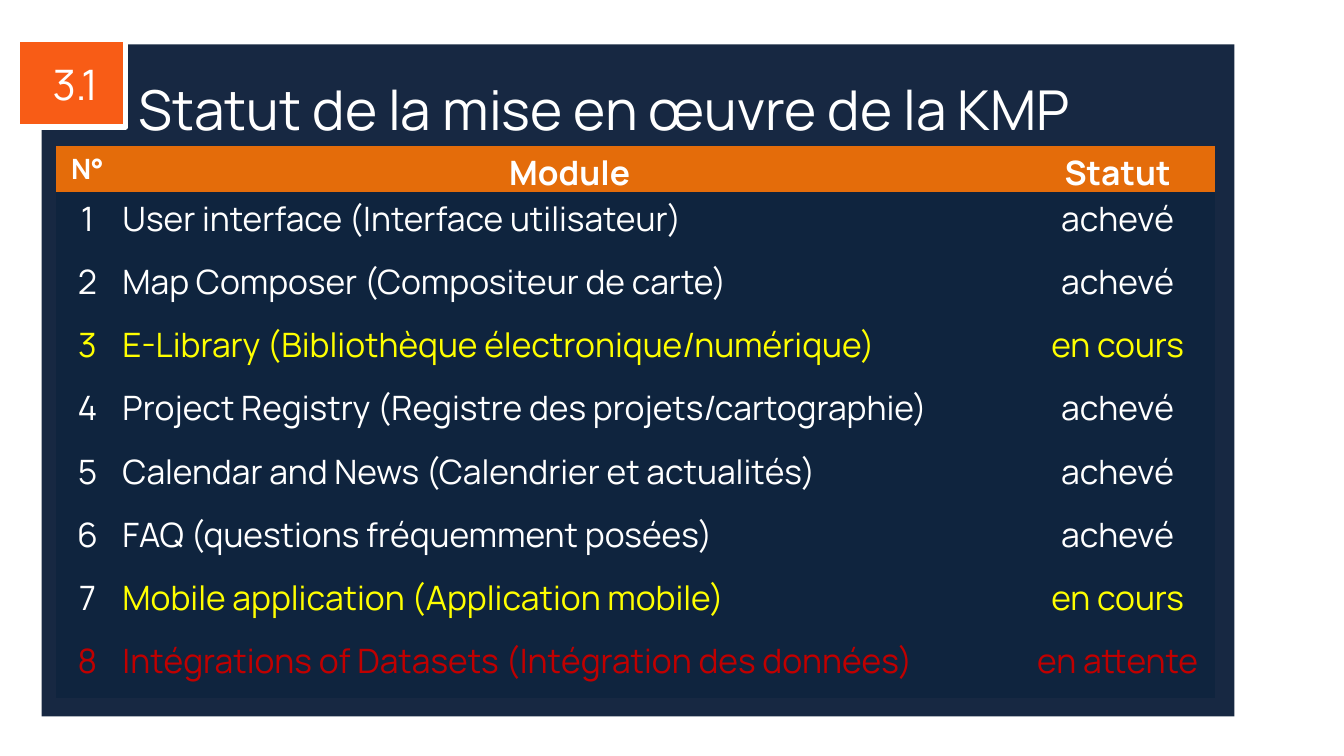
from dataclasses import dataclass

from pptx import Presentation
from pptx import util as u
from pptx.dml.color import RGBColor
from pptx.enum import shapes, text

FONT = "Manrope"
WHITE, YELLOW, RED = "FFFFFF", "FFFF00", "C00000"
NAVY, PANEL = "0F243E", "172842"
ORANGE, BADGE = "E46C0A", "F85C16"
CENTER, LEFT = text.PP_ALIGN.CENTER, text.PP_ALIGN.LEFT
COLUMN_WIDTHS = (2.39, 34.06, 7.37)
HEADER_HEIGHT, ROW_HEIGHT = 1.75, 2.39
TABLE_HEIGHT = 21.84


@dataclass(frozen=True)
class Area:
    left: float
    top: float
    width: float
    height: float

    def lengths(self) -> tuple:
        return tuple(u.Cm(n) for n in (self.left, self.top, self.width, self.height))


@dataclass(frozen=True)
class Module:
    name: str
    status: str
    color: str = WHITE
    number_color: str = WHITE


MODULES = (
    Module("User interface (Interface utilisateur)", "achevé"),
    Module("Map Composer (Compositeur de carte)", "achevé"),
    Module("E-Library (Bibliothèque électronique/numérique)", "en cours", YELLOW, YELLOW),
    Module("Project Registry (Registre des projets/cartographie)", "achevé"),
    Module("Calendar and News (Calendrier et actualités)", "achevé"),
    Module("FAQ (questions fréquemment posées)", "achevé"),
    Module("Mobile application (Application mobile)", "en cours", YELLOW),
    Module("Intégrations of Datasets (Intégration des données)", "en attente", RED, RED),
)


def rgb(value: str) -> RGBColor:
    return RGBColor.from_string(value)


def apply(target, values: dict) -> None:
    for name, value in values.items():
        setattr(target, name, value)


def write(frame, words: str, size: float, color: str = WHITE, align=LEFT, bold: bool = False):
    para = frame.paragraphs[0]
    para.alignment = align
    span = para.add_run()
    span.text = words
    apply(span.font, {"name": FONT, "size": u.Pt(size), "bold": bold})
    span.font.color.rgb = rgb(color)
    return para


def add_block(page, area: Area, color: str):
    block = page.shapes.add_shape(shapes.MSO_SHAPE.RECTANGLE, *area.lengths())
    block.shadow.inherit = False
    block.fill.solid()
    block.fill.fore_color.rgb = rgb(color)
    block.line.fill.background()
    return block


def fill_cell(cell, words: str, size: float, background: str, color: str, align, bold: bool) -> None:
    apply(cell, {
        "margin_left": u.Cm(0.13),
        "margin_right": u.Cm(0.13),
        "margin_top": u.Cm(0.13),
        "margin_bottom": 0,
        "vertical_anchor": text.MSO_ANCHOR.TOP,
    })
    cell.fill.solid()
    cell.fill.fore_color.rgb = rgb(background)
    write(cell.text_frame, words, size, color, align, bold)


def add_title(page) -> None:
    title = page.shapes.title
    area = Area(4.98, 2.74, 41.2, 2.77).lengths()
    apply(title, dict(zip(("left", "top", "width", "height"), area)))
    apply(title.text_frame, {
        "word_wrap": True,
        "auto_size": text.MSO_AUTO_SIZE.SHAPE_TO_FIT_TEXT,
        "vertical_anchor": text.MSO_ANCHOR.TOP,
    })
    para = write(title.text_frame, "Statut de la mise en œuvre de la KMP", 58.9)
    apply(para, {"line_spacing": 1.0, "space_before": u.Pt(0)})


def add_status_table(page) -> None:
    area = Area(2.11, 5.51, sum(COLUMN_WIDTHS), TABLE_HEIGHT)
    holder = page.shapes.add_table(len(MODULES) + 1, len(COLUMN_WIDTHS), *area.lengths())
    table = holder.table
    table.horz_banding = False
    style = table._tbl.tblPr.find("{*}tableStyleId")
    style.text = "{2D5ABB26-0587-4C30-8999-92F81FD0307C}"
    for column, width in zip(table.columns, COLUMN_WIDTHS):
        column.width = u.Cm(width)
    for index, row in enumerate(table.rows):
        row.height = u.Cm(ROW_HEIGHT if index else HEADER_HEIGHT)
    holder.height = u.Cm(TABLE_HEIGHT)

    for column, (heading, size) in enumerate((("N°", 30), ("Module", 36), ("Statut", 36))):
        fill_cell(table.cell(0, column), heading, size, ORANGE, WHITE, CENTER, True)
    for number, module in enumerate(MODULES, 1):
        entries = (
            (str(number), module.number_color, CENTER),
            (module.name, module.color, LEFT),
            (module.status, module.color, CENTER),
        )
        for column, (words, color, align) in enumerate(entries):
            fill_cell(table.cell(number, column), words, 36, NAVY, color, align, False)


def add_badge(page) -> None:
    badge = add_block(page, Area(0.64, 1.5, 4.11, 3.3), BADGE)
    badge.line.color.rgb = rgb(WHITE)
    badge.line.width = u.Pt(6)
    box = page.shapes.add_textbox(*Area(1.93, 2.39, 1.83, 1.75).lengths())
    margins = ("margin_left", "margin_top", "margin_right", "margin_bottom")
    apply(box.text_frame, dict.fromkeys(margins, 0))
    apply(box.text_frame, {
        "word_wrap": True,
        "auto_size": text.MSO_AUTO_SIZE.SHAPE_TO_FIT_TEXT,
    })
    write(box.text_frame, "3.1", 45, align=CENTER).line_spacing = u.Pt(48.9)


def main() -> None:
    deck = Presentation()
    apply(deck, {"slide_width": u.Cm(50.8), "slide_height": u.Cm(28.58)})
    page = deck.slides.add_slide(deck.slide_layouts[5])
    panel = add_block(page, Area(1.57, 1.68, 45.09, 25.4), PANEL)
    page.shapes.title.element.addprevious(panel.element)
    add_title(page)
    add_status_table(page)
    add_badge(page)
    deck.save("out.pptx")


if __name__ == "__main__":
    main()
